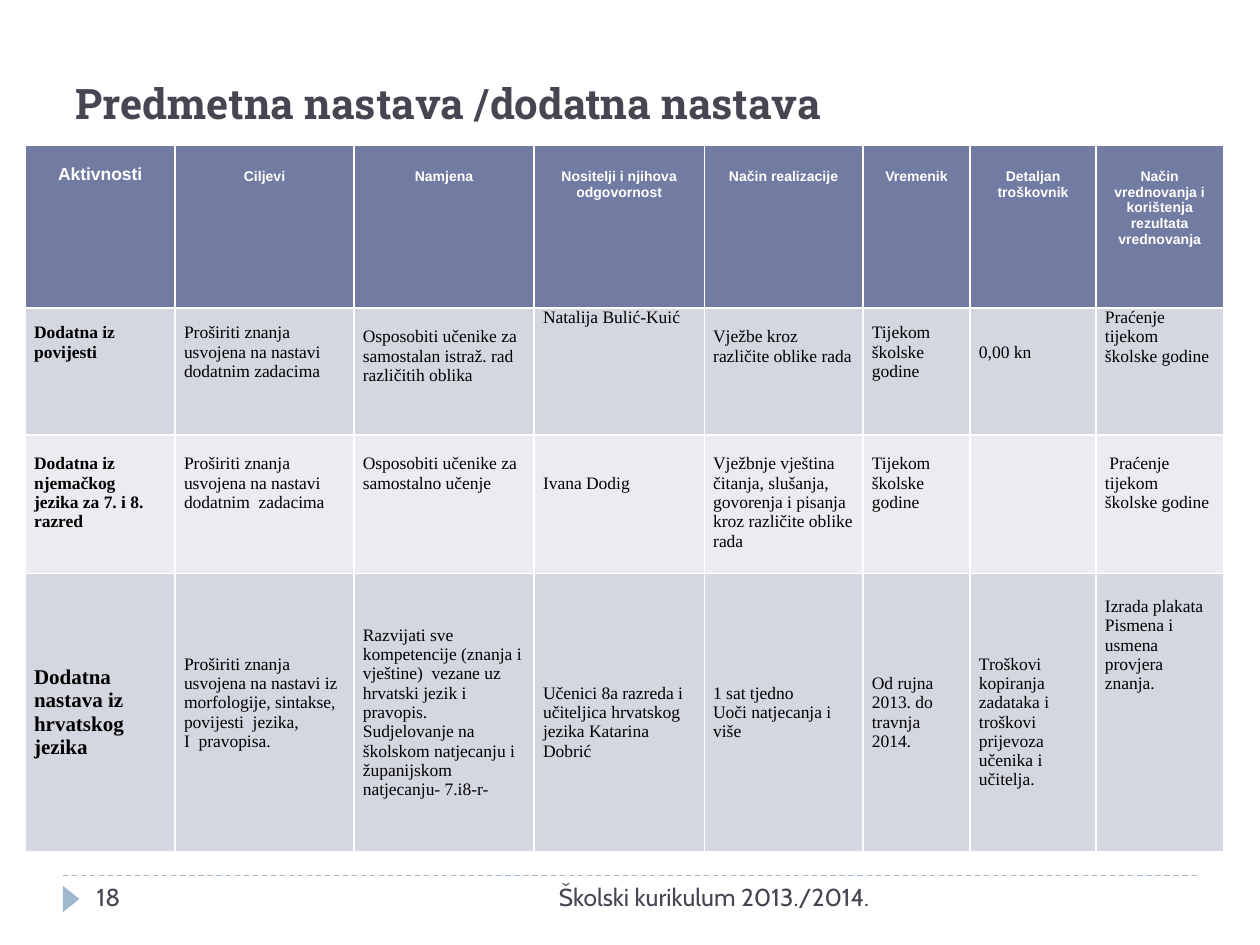
from lxml.etree import SubElement
from pptx import Presentation
from pptx.dml.color import RGBColor
from pptx.enum.dml import MSO_LINE
from pptx.enum.shapes import MSO_CONNECTOR, MSO_SHAPE
from pptx.enum.text import MSO_ANCHOR, PP_ALIGN
from pptx.oxml.ns import qn
from pptx.util import Pt

DARK = RGBColor(0x46, 0x46, 0x53)
LIGHT_BLUE = RGBColor(0x9F, 0xB8, 0xCD)
HEADER = RGBColor(0x72, 0x7C, 0xA3)
BAND_DARK = RGBColor(0xD5, 0xD7, 0xE0)
BAND_LIGHT = RGBColor(0xEB, 0xEC, 0xF0)
WHITE = RGBColor(0xFF, 0xFF, 0xFF)
BLACK = RGBColor(0, 0, 0)


def set_font(p, name, size, color, bold=False):
    p.font.name = name
    p.font.size = Pt(size)
    p.font.color.rgb = color
    p.font.bold = bold


def fill_cell(cell, text, top, bottom=0):
    cell.margin_left = cell.margin_right = Pt(5.1)
    cell.margin_top, cell.margin_bottom = Pt(top), Pt(bottom)
    cell.text_frame.text = text
    return cell.text_frame.paragraphs


prs = Presentation()
prs.slide_width, prs.slide_height = Pt(720), Pt(540)
s = prs.slides.add_slide(prs.slide_layouts[5])

title = s.shapes.title
title.left, title.top, title.width, title.height = Pt(36), Pt(21.6), Pt(648), Pt(55.4)
tf = title.text_frame
tf.text = "Predmetna nastava /dodatna nastava"
tf.vertical_anchor = MSO_ANCHOR.BOTTOM
p = tf.paragraphs[0]
p.alignment = PP_ALIGN.LEFT
set_font(p, "Roboto Slab", 24, DARK, True)

rule = s.shapes.add_connector(MSO_CONNECTOR.STRAIGHT, Pt(36), Pt(500.4), Pt(684), Pt(500.4))
rule.line.color.rgb = LIGHT_BLUE
rule.line.width = Pt(0.75)
rule.line.dash_style = MSO_LINE.DASH
SubElement(rule._element.spPr, qn("a:effectLst"))

sp = s.shapes.add_shape(MSO_SHAPE.ISOSCELES_TRIANGLE, Pt(33.1), Pt(509), Pt(15.1), Pt(9.4))
sp.rotation = 90
sp.shadow.inherit = False
sp.fill.solid()
sp.fill.fore_color.rgb = LIGHT_BLUE
sp.line.fill.background()

for text, left, width, align in [
    ("Školski kurikulum 2013./2014.", 228.2, 275.8, PP_ALIGN.RIGHT),
    ("18", 48.2, 156.2, PP_ALIGN.LEFT),
]:
    tf = s.shapes.add_textbox(Pt(left), Pt(500.4), Pt(width), Pt(28.8)).text_frame
    tf.word_wrap = True
    p = tf.paragraphs[0]
    p.text = text
    p.alignment = align
    set_font(p, "Cabin", 14, DARK)

headers = ["Aktivnosti", "Ciljevi", "Namjena", "Nositelji i njihova odgovornost",
           "Način realizacije", "Vremenik", "Detaljan troškovnik",
           "Način vrednovanja i korištenja rezultata vrednovanja"]
rows = [
    [("Dodatna iz povijesti", 8.8),
     ("Proširiti znanja\nusvojena na nastavi\ndodatnim zadacima", 8.8),
     ("Osposobiti učenike za samostalan istraž. rad različitih oblika", 11),
     ("Natalija Bulić-Kuić", 0),
     ("Vježbe kroz različite oblike rada", 11),
     ("Tijekom školske godine", 8.8),
     ("0,00 kn", 19.8),
     ("Praćenje tijekom školske godine", 0)],
    [("Dodatna iz njemačkog\njezika za 7. i 8. razred", 11),
     ("Proširiti znanja usvojena na nastavi dodatnim  zadacima", 11),
     ("Osposobiti učenike za samostalno učenje", 11),
     ("Ivana Dodig", 22),
     ("Vježbnje vještina čitanja, slušanja, govorenja i pisanja kroz različite oblike rada", 11),
     ("Tijekom školske godine", 11),
     ("", 0),
     (" Praćenje tijekom školske godine", 11)],
    [("Dodatna nastava iz hrvatskog jezika", 0),
     ("Proširiti znanja usvojena na nastavi iz morfologije, sintakse, povijesti  jezika,\n"
      "I  pravopisa.", 0, 11),
     ("Razvijati sve kompetencije (znanja i vještine)  vezane uz hrvatski jezik i pravopis.\n"
      "Sudjelovanje na školskom natjecanju i županijskom natjecanju- 7.i8-r-", 0),
     ("Učenici 8a razreda i učiteljica hrvatskog jezika Katarina Dobrić", 11),
     ("1 sat tjedno\nUoči natjecanja i više", 0),
     ("Od rujna 2013. do travnja 2014.", 0),
     ("Troškovi kopiranja zadataka i troškovi prijevoza učenika i učitelja.", 11),
     ("Izrada plakata\nPismena i usmena provjera znanja.", 11, 88)],
]
widths = [85.7, 102.2, 103, 97.2, 90.7, 61.2, 72, 72.7]
heights = [93, 72.7, 79, 154]

table = s.shapes.add_table(4, 8, Pt(14.4), Pt(83), Pt(sum(widths)), Pt(sum(heights))).table
for column, width in zip(table.columns, widths):
    column.width = Pt(width)
for row, height in zip(table.rows, heights):
    row.height = Pt(height)

for c, text in enumerate(headers):
    cell = table.cell(0, c)
    cell.fill.solid()
    cell.fill.fore_color.rgb = HEADER
    for p in fill_cell(cell, text, 13.3 if c else 11):
        p.alignment = PP_ALIGN.CENTER
        set_font(p, "Arial", 8 if c else 10, WHITE, True)

for r, row in enumerate(rows, 1):
    for c, content in enumerate(row):
        cell = table.cell(r, c)
        cell.fill.solid()
        cell.fill.fore_color.rgb = BAND_DARK if r % 2 else BAND_LIGHT
        if r == 3:
            cell.vertical_anchor = MSO_ANCHOR.MIDDLE
        for p in fill_cell(cell, *content):
            set_font(p, "Times New Roman", 12 if (r, c) == (3, 0) else 10, BLACK, c == 0)

prs.save("out.pptx")
